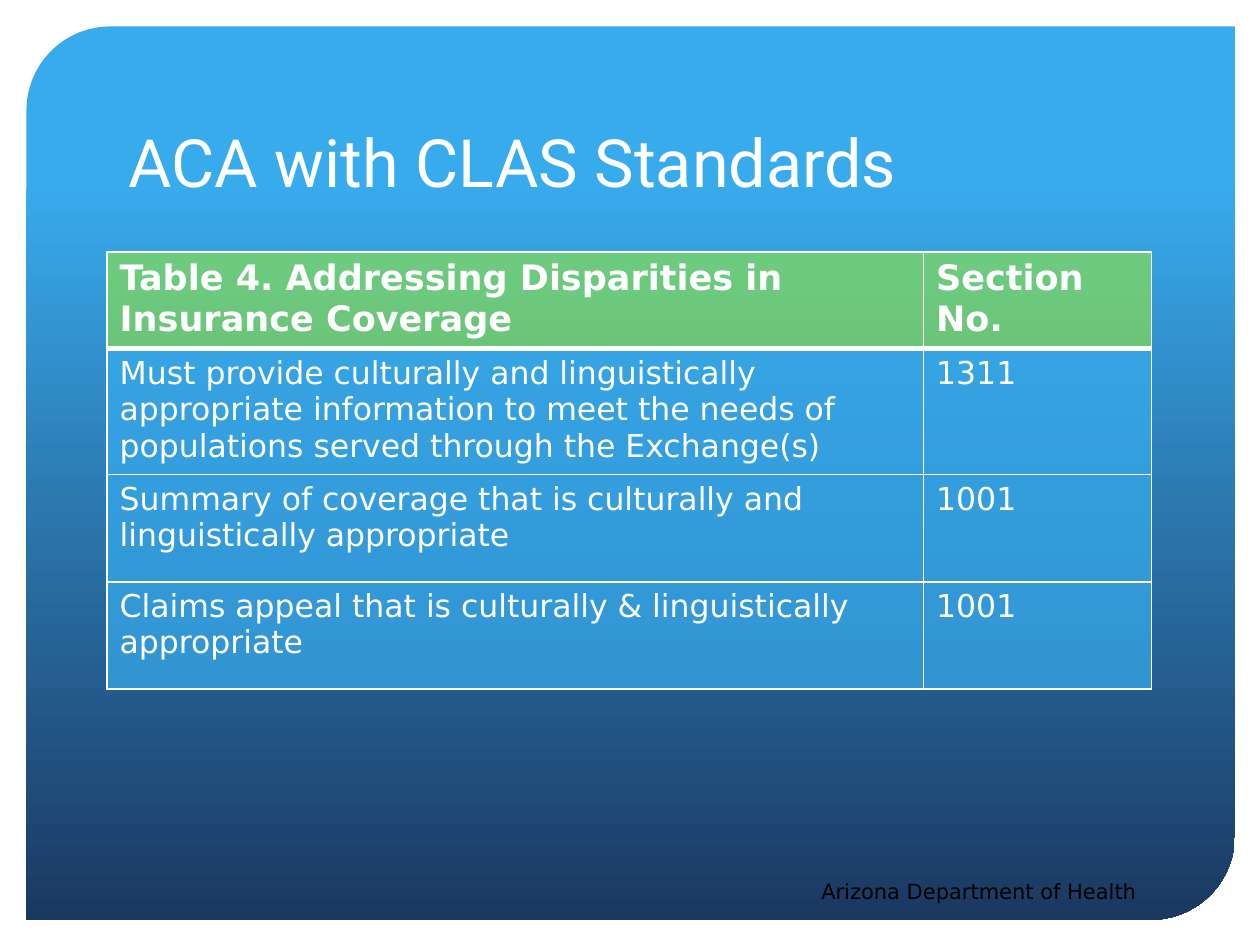
from lxml import etree
from pptx import Presentation
from pptx.dml.color import RGBColor
from pptx.enum.shapes import MSO_SHAPE
from pptx.enum.text import MSO_ANCHOR
from pptx.oxml.ns import qn
from pptx.util import Inches, Pt

PANEL_SHAPE = MSO_SHAPE.ROUND_2_DIAG_RECTANGLE
TOP, BOTTOM = MSO_ANCHOR.TOP, MSO_ANCHOR.BOTTOM
BODY_FONT, TITLE_FONT = "DejaVu Sans", "Roboto"
WHITE, BLACK = "FFFFFF", "000000"
SKY, NAVY, GREEN = "38ABED", "1B3861", "9DF131"
COLUMN_WIDTHS = (6.48, 1.81)
ROW_HEIGHTS = (0.67, 0.85, 0.85, 0.85)
ROWS = (
    ("Table 4. Addressing Disparities in Insurance Coverage", "Section No."),
    ("Must provide culturally and linguistically appropriate information "
     "to meet the needs of populations served through the Exchange(s)", "1311"),
    ("Summary of coverage that is culturally and linguistically appropriate", "1001"),
    ("Claims appeal that is culturally & linguistically appropriate", "1001"),
)


def color(value):
    """Turn a hex string into a colour."""
    return RGBColor.from_string(value)


def write_text(frame, text, size, font=BODY_FONT, fill=WHITE, bold=False):
    """Write one formatted run into a text frame."""
    run = frame.paragraphs[0].add_run()
    run.text = text
    run.font.name = font
    run.font.size = Pt(size)
    run.font.bold = bold
    run.font.color.rgb = color(fill)


def add_panel(slide, left, top, width, height):
    """Add the gradient panel with two rounded corners."""
    shape = slide.shapes.add_shape(
        PANEL_SHAPE, Inches(left), Inches(top), Inches(width), Inches(height))
    shape.shadow.inherit = False
    shape.adjustments[0] = 0.094
    shape.adjustments[1] = 0
    shape.line.fill.background()
    shape.fill.gradient()
    shape.fill.gradient_angle = 270
    for stop, position, value in zip(
            shape.fill.gradient_stops, (0.17, 1), (SKY, NAVY)):
        stop.position = position
        stop.color.rgb = color(value)


def add_text(slide, text, left, top, width, height, anchor=TOP, **text_format):
    """Add a wrapping text box."""
    frame = slide.shapes.add_textbox(
        Inches(left), Inches(top), Inches(width), Inches(height)).text_frame
    frame.word_wrap = True
    frame.vertical_anchor = anchor
    write_text(frame, text, **text_format)


def add_borders(cell, **widths):
    """Draw white cell borders with widths in points by side."""
    properties = cell._tc.get_or_add_tcPr()
    for side, width in widths.items():
        line = etree.SubElement(properties, qn(f"a:ln{side}"), w=str(Pt(width)))
        fill = etree.SubElement(line, qn("a:solidFill"))
        etree.SubElement(fill, qn("a:srgbClr"), val=WHITE)


def fill_cell(cell, value, opacity):
    """Fill a cell with a partly transparent colour, opacity in percent."""
    cell.fill.solid()
    cell.fill.fore_color.rgb = color(value)
    for element in cell._tc.tcPr.findall(f"{qn('a:solidFill')}/{qn('a:srgbClr')}"):
        etree.SubElement(element, qn("a:alpha"), val=str(opacity * 1000))


def add_standards_table(slide, left, top):
    """Add the table of provisions and their section numbers."""
    table = slide.shapes.add_table(
        len(ROWS), len(COLUMN_WIDTHS), Inches(left), Inches(top),
        Inches(sum(COLUMN_WIDTHS)), Inches(sum(ROW_HEIGHTS))).table
    for column, width in zip(table.columns, COLUMN_WIDTHS):
        column.width = Inches(width)
    for index, (texts, height) in enumerate(zip(ROWS, ROW_HEIGHTS)):
        header = index == 0
        table.rows[index].height = Inches(height)
        for cell, text in zip(table.rows[index].cells, texts):
            write_text(cell.text_frame, text, size=20 if header else 18, bold=header)
            add_borders(cell, L=1, R=1, T=3 if index == 1 else 1, B=3 if header else 1)
            fill_cell(cell, *((GREEN, 54) if header else (SKY, 72)))


def main():
    """Build and save the slide."""
    presentation = Presentation()
    presentation.slide_width = Inches(10)
    presentation.slide_height = Inches(7.5)
    slide = presentation.slides.add_slide(presentation.slide_layouts[6])
    add_panel(slide, 0.21, 0.21, 9.59, 7.09)
    add_text(slide, "ACA with CLAS Standards", 0.92, 0.5, 8.29, 1.14,
             anchor=BOTTOM, size=38, font=TITLE_FONT)
    add_standards_table(slide, 0.85, 2)
    add_text(slide, "Arizona Department of Health", 6.42, 6.92, 2.83, 0.3,
             size=12, fill=BLACK)
    presentation.save("out.pptx")


if __name__ == "__main__":
    main()
